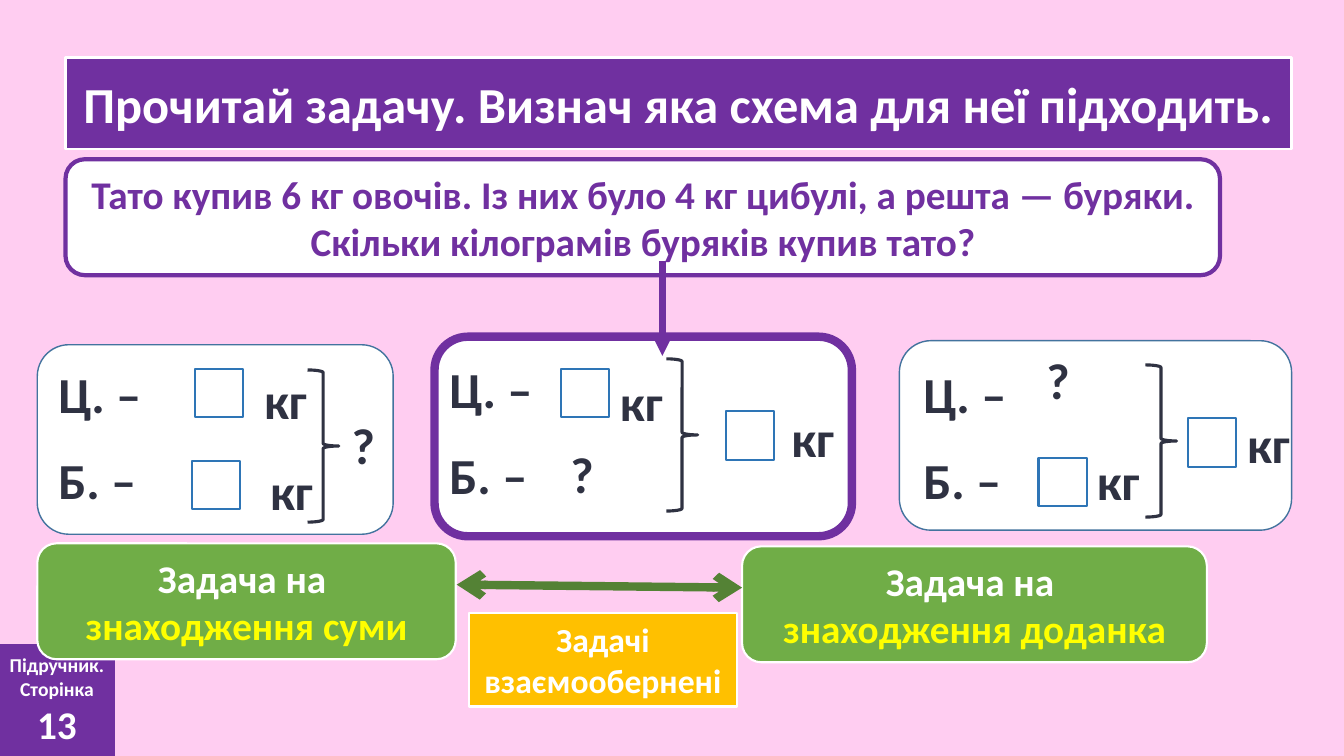
import pptx
import pptx.util
import pptx.dml.color
import pptx.enum.shapes
import pptx.enum.text
import pptx.oxml
import pptx.oxml.ns

Inches = pptx.util.Inches
SHAPES = pptx.enum.shapes.MSO_SHAPE
ALIGN = pptx.enum.text.PP_ALIGN
ANCHOR = pptx.enum.text.MSO_ANCHOR
FIT = pptx.enum.text.MSO_AUTO_SIZE

COLORS = {
    "pink": "FFCDF1", "white": "FFFFFF", "purple": "7030A0", "ink": "2F3242",
    "blue": "2E75B6", "steel": "43739E", "green": "70AD47",
    "dark green": "548235", "yellow": "FFFF00", "amber": "FFC000",
}


def color(name):
    return pptx.dml.color.RGBColor.from_string(COLORS[name])


class SchemeSlide:
    font = {"name": "Calibri", "bold": True}

    def __init__(self, deck):
        self.slide = deck.slides.add_slide(deck.slide_layouts[5])
        self.slide.background.fill.solid()
        self.slide.background.fill.fore_color.rgb = color("pink")

    def paint(self, shape, fill, line, width):
        shape.shadow.inherit = False
        if fill:
            shape.fill.solid()
            shape.fill.fore_color.rgb = color(fill)
        else:
            shape.fill.background()
        if line:
            shape.line.color.rgb = color(line)
            shape.line.width = pptx.util.Pt(width)
        else:
            shape.line.fill.background()

    def set_text(self, shape, lines, align=ALIGN.CENTER, **frame_format):
        frame = shape.text_frame
        settings = {"word_wrap": True, "auto_size": FIT.NONE,
                    "vertical_anchor": ANCHOR.MIDDLE, **frame_format}
        for key, value in settings.items():
            setattr(frame, key, value)
        for index, (text, size, tint) in enumerate(lines):
            paragraph = frame.add_paragraph() if index else frame.paragraphs[0]
            paragraph.alignment = align
            run = paragraph.add_run()
            run.text = text
            for key, value in {**self.font, "size": pptx.util.Pt(size)}.items():
                setattr(run.font, key, value)
            run.font.color.rgb = color(tint)

    def title(self, box, text):
        heading = self.slide.shapes.title
        for key, value in zip(("left", "top", "width", "height"), box):
            setattr(heading, key, Inches(value))
        self.paint(heading, "purple", "white", 1.5)
        self.set_text(heading, [(text, 36, "white")])

    def shape(self, kind, box, fill=None, line=None, width=1.5, lines=(), **frame_format):
        block = self.slide.shapes.add_shape(kind, *map(Inches, box))
        self.paint(block, fill, line, width)
        if lines:
            self.set_text(block, lines, **frame_format)

    def label(self, left, top, width, text):
        box = self.slide.shapes.add_textbox(*map(Inches, (left, top, width, 0.71)))
        self.set_text(box, [(text, 36, "ink")], ALIGN.LEFT,
                      auto_size=FIT.SHAPE_TO_FIT_TEXT, vertical_anchor=ANCHOR.TOP)

    def blank(self, left, top):
        self.shape(SHAPES.RECTANGLE, (left, top, 0.48, 0.48), line="blue")

    def brace(self, left, top):
        self.shape(SHAPES.RIGHT_BRACE, (left, top, 0.31, 1.51), line="ink", width=2.25)

    def arrow(self, start, end, tint, width, **ends):
        connector = self.slide.shapes.add_connector(
            pptx.enum.shapes.MSO_CONNECTOR.STRAIGHT, *map(Inches, start + end))
        connector.line.color.rgb = color(tint)
        connector.line.width = pptx.util.Pt(width)
        outline = connector.line._get_or_add_ln()
        for end_name, kind in ends.items():
            outline.append(pptx.oxml.parse_xml(
                f'<a:{end_name} {pptx.oxml.ns.nsdecls("a")} type="{kind}"/>'))
        connector._element.spPr.append(pptx.oxml.parse_xml(
            f'<a:effectLst {pptx.oxml.ns.nsdecls("a")}/>'))


SCHEMES = [
    {"card": (0.37, 3.42, 3.53, 1.88), "line": "steel", "width": 1,
     "names": (0.48, 3.55), "brace": (3.05, 3.67), "question": (3.39, 4.06),
     "blanks": [(1.93, 3.66), (1.9, 4.57)], "units": [(2.52, 3.61), (2.58, 4.52)]},
    {"card": (4.31, 3.34, 4.14, 1.98), "line": "purple", "width": 6,
     "names": (4.36, 3.5), "brace": (6.61, 3.56), "question": (5.56, 4.35),
     "blanks": [(5.56, 3.66), (7.2, 4.08)], "units": [(6.05, 3.63), (7.75, 3.99)]},
    {"card": (8.92, 3.38, 3.89, 1.88), "line": "steel", "width": 1,
     "names": (9.06, 3.55), "brace": (11.36, 3.62), "question": (10.28, 3.41),
     "blanks": [(10.3, 4.54), (11.78, 4.15)], "units": [(10.78, 4.42), (12.27, 4.05)]},
]

TASK_KINDS = [
    ((0.37, 5.39, 4.15, 1.15), "знаходження суми"),
    ((7.36, 5.42, 4.61, 1.15), "знаходження доданка"),
]


def main():
    deck = pptx.Presentation()
    deck.slide_width, deck.slide_height = Inches(13.33), Inches(7.5)
    page = SchemeSlide(deck)

    page.title((0.65, 0.57, 12.16, 0.91),
               "Прочитай задачу. Визнач яка схема для неї підходить.")
    task = ("Тато купив 6 кг овочів. Із них було 4 кг цибулі, а решта — буряки. "
            "Скільки кілограмів буряків купив тато?")
    page.shape(SHAPES.ROUNDED_RECTANGLE, (0.65, 1.58, 11.45, 1.15), "white", "purple", 3,
               [(task, 28, "purple")], vertical_anchor=ANCHOR.TOP)

    for scheme in SCHEMES:
        page.shape(SHAPES.ROUNDED_RECTANGLE, scheme["card"], "white",
                   scheme["line"], scheme["width"])
        left, top = scheme["names"]
        page.label(left, top, 1.2, "Ц. –")
        page.label(left, top + 0.86, 1.2, "Б. –")
        for spot in scheme["blanks"]:
            page.blank(*spot)
        for spot in scheme["units"]:
            page.label(*spot, 0.72, "кг")
        page.brace(*scheme["brace"])
        page.label(*scheme["question"], 0.52, "?")

    page.arrow((6.57, 2.59), (6.57, 3.53), "purple", 4.5, tailEnd="triangle")
    page.shape(SHAPES.RECTANGLE, (-0.01, 6.39, 1.15, 1.11), "purple",
               lines=[("Підручник.", 14, "white"), ("Сторінка", 14, "white"),
                      ("13", 28, "white")],
               margin_left=0, margin_right=0)
    for box, goal in TASK_KINDS:
        page.shape(SHAPES.ROUNDED_RECTANGLE, box, "green", "white",
                   lines=[("Задача на ", 28, "white"), (goal, 28, "yellow")],
                   vertical_anchor=ANCHOR.TOP)
    page.arrow((4.53, 5.8), (7.36, 5.83), "dark green", 6, headEnd="arrow", tailEnd="arrow")
    page.shape(SHAPES.RECTANGLE, (4.65, 6.08, 2.66, 0.93), "amber", "white",
               lines=[("Задачі взаємообернені", 24, "white")])

    deck.save("out.pptx")


if __name__ == "__main__":
    main()
